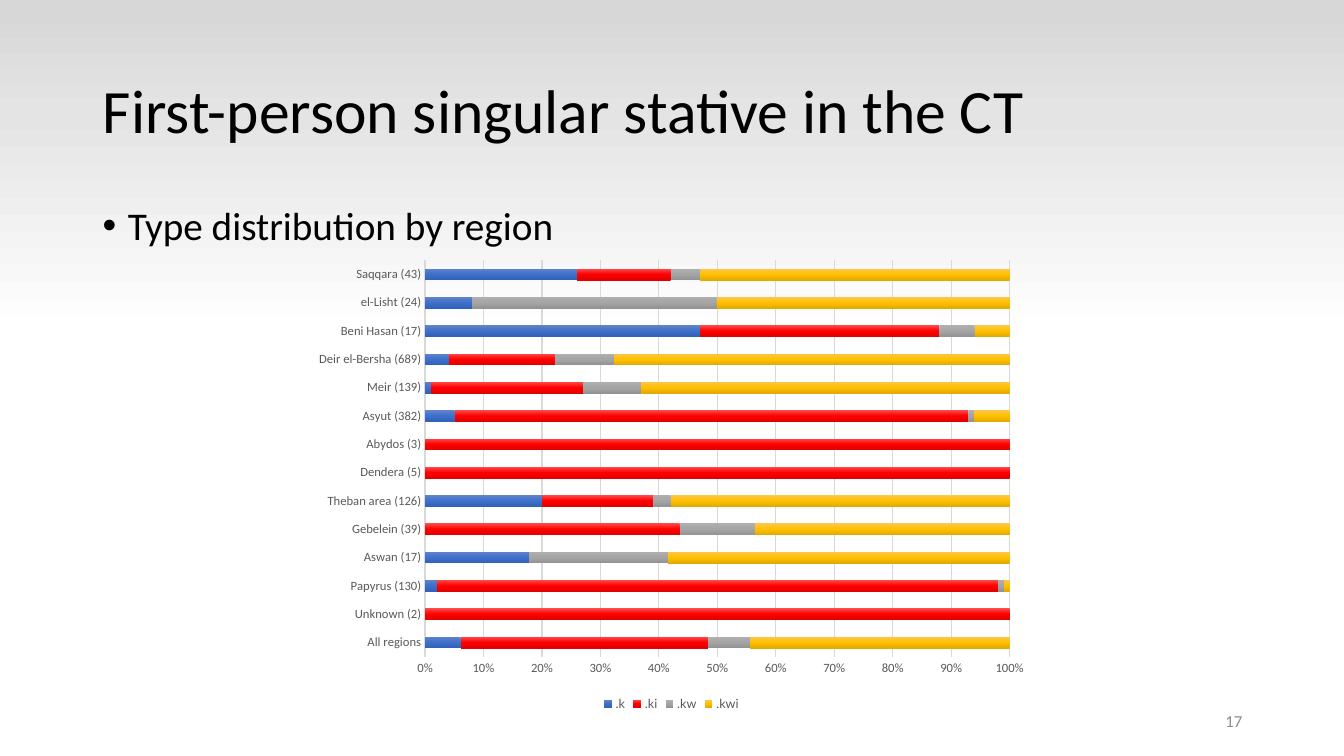
from dataclasses import dataclass

from lxml.etree import SubElement
from pptx import Presentation
from pptx.chart.data import CategoryChartData
from pptx.dml.color import RGBColor
from pptx.enum.chart import XL_CHART_TYPE as ChartType, XL_LEGEND_POSITION as LegendPos, XL_TICK_MARK as Tick
from pptx.enum.text import MSO_ANCHOR as Anchor, MSO_AUTO_SIZE as AutoSize, PP_ALIGN as Align
from pptx.oxml.ns import qn
from pptx.util import Inches, Pt

Stops = tuple[tuple[int, str], ...]


@dataclass(frozen=True)
class Theme:
    font: str = "Calibri"
    legend_font: str = "Lato"
    ink: str = "000000"
    label: str = "595959"
    number: str = "8C8C8C"
    grid: str = "D9D9D9"
    title_size: int = 44
    body_size: int = 28
    number_size: int = 12
    chart_size: int = 10
    label_size: int = 9
    background: Stops = ((0, "D7D7D7"), (1, "D7D7D7"), (15, "E4E4E4"), (44, "FFFFFF"))


@dataclass(frozen=True)
class Ending:
    name: str
    shares: tuple[int | None, ...]
    stops: Stops


THEME = Theme()

REGIONS = (
    "All regions", "Unknown (2)", "Papyrus (130)", "Aswan (17)", "Gebelein (39)",
    "Theban area (126)", "Dendera (5)", "Abydos (3)", "Asyut (382)", "Meir (139)",
    "Deir el-Bersha (689)", "Beni Hasan (17)", "el-Lisht (24)", "Saqqara (43)",
)

ENDINGS = (
    Ending(".k", (6, None, 2, 18, None, 20, None, None, 5, 1, 4, 47, 8, 26),
           ((0, "6183CB"), (50, "3E70CA"), (100, "3062BB"))),
    Ending(".ki", (42, 100, 96, None, 44, 19, 100, 100, 87, 26, 18, 41, None, 16),
           ((0, "FF4B4B"), (50, "FF0000"), (100, "E30000"))),
    Ending(".kw", (7, None, 1, 24, 13, 3, None, None, 1, 10, 10, 6, 42, 5),
           ((0, "AFAFAF"), (50, "A5A5A5"), (100, "939393"))),
    Ending(".kwi", (44, None, 1, 59, 44, 58, None, None, 6, 63, 67, 6, 50, 53),
           ((0, "FFC64B"), (50, "FFC000"), (100, "E3AB00"))),
)


def style_font(font, size: int, color: str, name: str = THEME.font) -> None:
    font.name = name
    font.size = Pt(size)
    font.color.rgb = RGBColor.from_string(color)


def place(sp, left: float, top: float, width: float, height: float) -> None:
    sp.left, sp.top = Inches(left), Inches(top)
    sp.width, sp.height = Inches(width), Inches(height)


def write(sp, text: str, size: int, color: str, align: Align, anchor: Anchor):
    """Fill a text shape with one paragraph and return that paragraph."""
    tf = sp.text_frame
    tf.text = text
    tf.word_wrap = True
    tf.auto_size = AutoSize.NONE
    tf.vertical_anchor = anchor
    p = tf.paragraphs[0]
    p.alignment = align
    style_font(p.runs[0].font, size, color)
    return p


def add_bullet(p, indent: float) -> None:
    pPr = p._p.get_or_add_pPr()
    pPr.set("marL", str(Inches(indent)))
    pPr.set("indent", str(-Inches(indent)))
    SubElement(pPr, qn("a:buFont")).set("typeface", "Arial")
    SubElement(pPr, qn("a:buChar")).set("char", "•")


def set_gradient(fill, element, stops: Stops) -> None:
    """Give the fill a top-to-bottom gradient with any number of stops."""
    fill.gradient()
    grad = next(element.iter(qn("a:gradFill")))
    grad.find(qn("a:lin")).set("ang", str(90 * 60000))
    stop_list = grad.find(qn("a:gsLst"))
    for stop in list(stop_list):
        stop_list.remove(stop)
    for percent, color in stops:
        stop = SubElement(stop_list, qn("a:gs"), pos=str(percent * 1000))
        SubElement(stop, qn("a:srgbClr"), val=color)


def style_axis(axis) -> None:
    axis.major_tick_mark = axis.minor_tick_mark = Tick.NONE
    style_font(axis.tick_labels.font, THEME.label_size, THEME.label)


def add_region_chart(s) -> None:
    data = CategoryChartData()
    data.categories = REGIONS
    for ending in ENDINGS:
        data.add_series(ending.name, ending.shares)
    frame = s.shapes.add_chart(ChartType.BAR_STACKED_100, Inches(3.02), Inches(2.49),
                               Inches(7.28), Inches(4.61), data)
    chart = frame.chart
    chart.has_title = False
    style_font(chart.font, THEME.chart_size, THEME.ink)

    # Bars
    plot = chart.plots[0]
    plot.gap_width, plot.overlap = 150, 100
    plot.vary_by_categories = False
    for series, ending in zip(plot.series, ENDINGS):
        series.invert_if_negative = False
        set_gradient(series.format.fill, series.format.element, ending.stops)

    # Axes
    regions, shares = chart.category_axis, chart.value_axis
    for axis in (regions, shares):
        style_axis(axis)
    regions.format.line.color.rgb = RGBColor.from_string(THEME.grid)
    regions.format.line.width = Pt(1)
    shares.format.line.fill.background()
    shares.has_major_gridlines = True
    grid = shares.major_gridlines.format.line
    grid.color.rgb = RGBColor.from_string(THEME.grid)
    grid.width = Pt(0.75)
    shares.tick_labels.number_format = "0%"
    shares.tick_labels.number_format_is_linked = False

    # Legend
    chart.has_legend = True
    chart.legend.position = LegendPos.BOTTOM
    chart.legend.include_in_layout = False
    style_font(chart.legend.font, THEME.label_size, THEME.label, THEME.legend_font)


def main() -> None:
    prs = Presentation()
    prs.slide_width, prs.slide_height = Inches(13.33), Inches(7.5)
    s = prs.slides.add_slide(prs.slide_layouts[5])
    set_gradient(s.background.fill, s.background.element, THEME.background)

    # Title
    title = s.shapes.title
    place(title, 0.92, 0.4, 11.5, 1.45)
    p = write(title, "First-person singular stative in the CT",
              THEME.title_size, THEME.ink, Align.LEFT, Anchor.MIDDLE)
    p.line_spacing = 0.9

    # Bullet
    body = s.shapes.add_textbox(Inches(0.92), Inches(2), Inches(11.5), Inches(4.76))
    p = write(body, "Type distribution by region",
              THEME.body_size, THEME.ink, Align.LEFT, Anchor.TOP)
    p.line_spacing = 0.9
    p.space_before = Pt(10)
    add_bullet(p, 0.25)

    add_region_chart(s)

    # Slide number
    number = s.shapes.add_textbox(Inches(9.42), Inches(6.95), Inches(3), Inches(0.4))
    write(number, "17", THEME.number_size, THEME.number, Align.RIGHT, Anchor.MIDDLE)

    prs.save("out.pptx")


if __name__ == "__main__":
    main()
